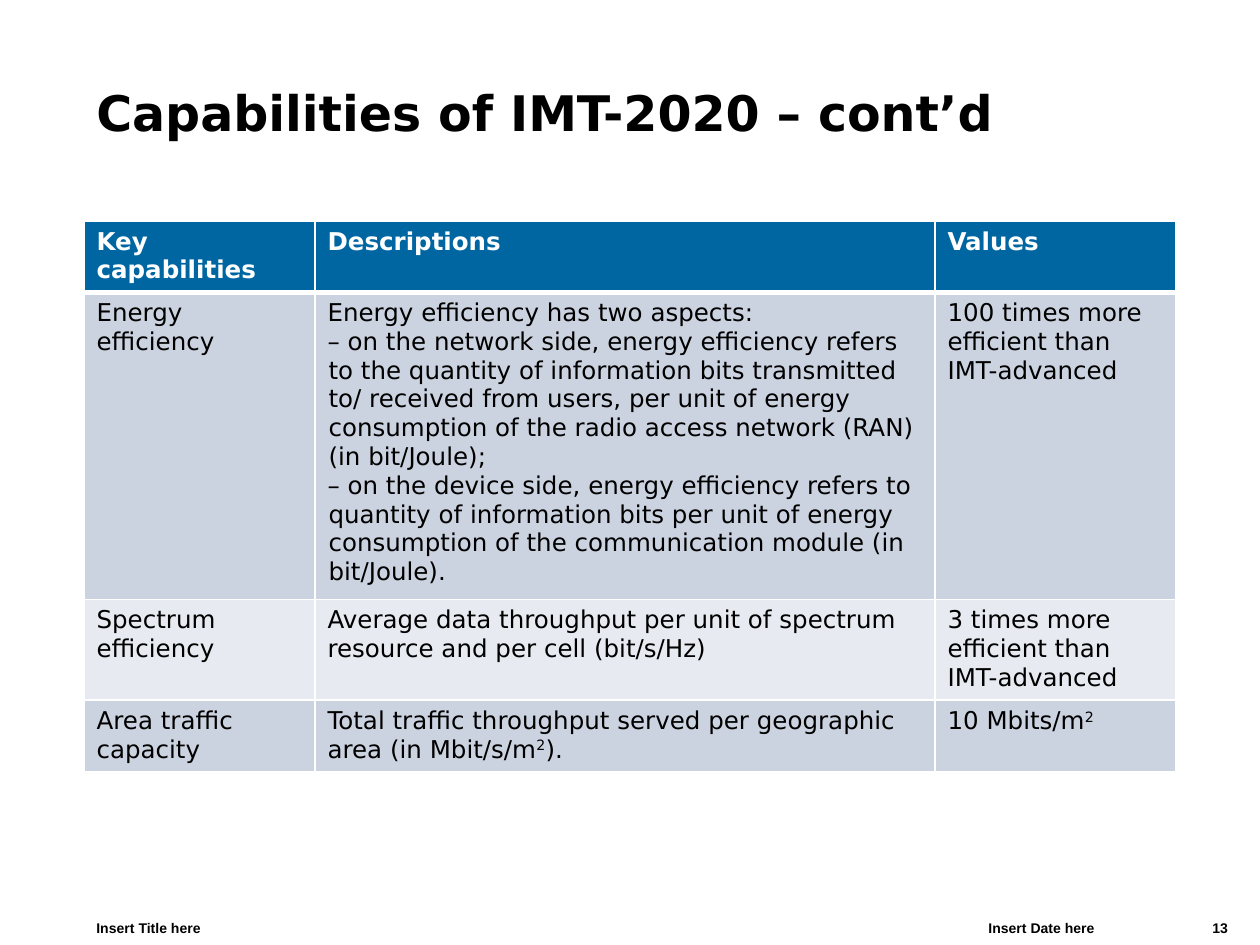
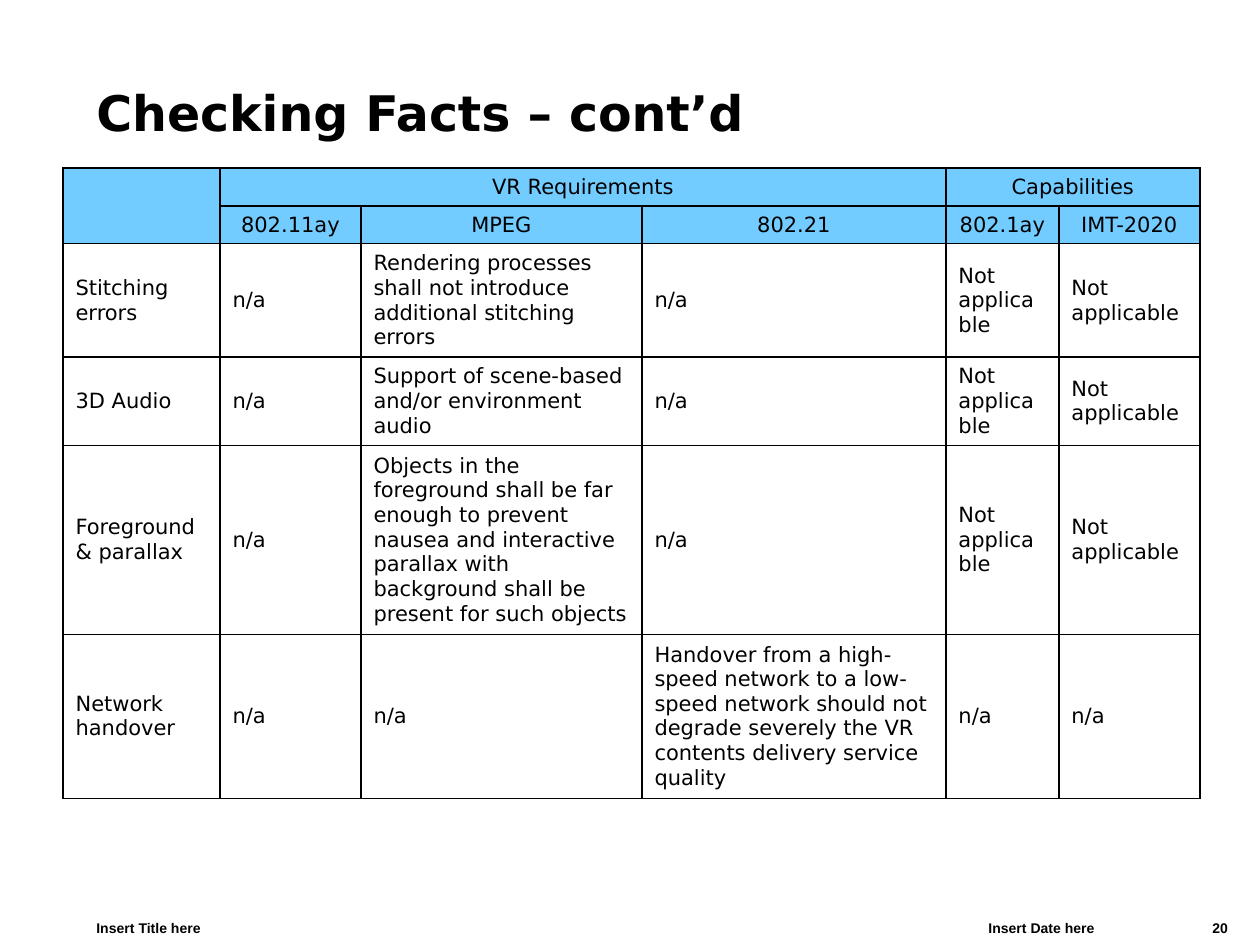
from lxml.etree import SubElement
from pptx import Presentation
from pptx.dml.color import RGBColor
from pptx.enum.text import MSO_ANCHOR, PP_ALIGN
from pptx.oxml.ns import qn
from pptx.util import Inches, Pt

PX = 7257  # EMU in one pixel, 126 pixels to the inch

BLACK = RGBColor(0x00, 0x00, 0x00)
WHITE = RGBColor(0xFF, 0xFF, 0xFF)
DEEP_BLUE = RGBColor(0x00, 0x66, 0xA1)
SKY_BLUE = RGBColor(0x73, 0xCC, 0xFF)
GREY_BLUE = RGBColor(0xCC, 0xD3, 0xE0)
PALE_GREY = RGBColor(0xE7, 0xEA, 0xF0)

BODY_FONT = "DejaVu Sans"
FOOTER_FONT = "Arial"

CAPABILITIES = [
    ["Key capabilities", "Descriptions", "Values"],
    ["Energy efficiency",
     "Energy efficiency has two aspects:\n"
     "– on the network side, energy efficiency refers to the quantity of "
     "information bits transmitted to/ received from users, per unit of energy "
     "consumption of the radio access network (RAN) (in bit/Joule);\n"
     "– on the device side, energy efficiency refers to quantity of information "
     "bits per unit of energy consumption of the communication module (in bit/Joule).",
     "100 times more efficient than IMT-advanced"],
    ["Spectrum efficiency",
     "Average data throughput per unit of spectrum resource and per cell (bit/s/Hz)",
     "3 times more efficient than IMT-advanced"],
    ["Area traffic capacity",
     "Total traffic throughput served per geographic area (in Mbit/s/m²).",
     "10 Mbits/m²"],
]

NOT_APPLICABLE = ["Not applicable"] * 2
FACTS = [
    ["", "VR Requirements", "", "", "Capabilities", ""],
    ["", "802.11ay", "MPEG", "802.21", "802.1ay", "IMT-2020"],
    ["Stitching errors", "n/a",
     "Rendering processes shall not introduce additional stitching errors",
     "n/a", *NOT_APPLICABLE],
    ["3D Audio", "n/a", "Support of scene-based and/or environment audio",
     "n/a", *NOT_APPLICABLE],
    ["Foreground & parallax", "n/a",
     "Objects in the foreground shall be far enough to prevent nausea and "
     "interactive parallax with background shall be present for such objects",
     "n/a", *NOT_APPLICABLE],
    ["Network handover", "n/a", "n/a",
     "Handover from a high-speed network to a low-speed network should not "
     "degrade severely the VR contents delivery service quality",
     "n/a", "n/a"],
]

PAGES = [
    dict(title="Capabilities of IMT-2020 – cont’d", number="13", cells=CAPABILITIES,
         left=84, top=221, columns=[231, 620, 241], rows=[69, 301, 99, 69],
         merges=[], header_rows=1, header_fill=DEEP_BLUE, header_color=WHITE,
         header_bold=True, header_align=PP_ALIGN.LEFT, header_line=3,
         bands=[GREY_BLUE, PALE_GREY], grid=WHITE, size=14, anchor=MSO_ANCHOR.TOP),
    dict(title="Checking Facts – cont’d", number="20", cells=FACTS,
         left=63, top=168, columns=[157, 141, 281, 304, 113, 141],
         rows=[37, 37, 111, 87, 185, 160],
         merges=[(0, 0, 1, 0), (0, 1, 0, 3), (0, 4, 0, 5)],
         header_rows=2, header_fill=SKY_BLUE, header_color=BLACK,
         header_bold=False, header_align=PP_ALIGN.CENTER, header_line=1,
         bands=[None], grid=BLACK, size=12, anchor=MSO_ANCHOR.MIDDLE),
]


def write(frame, text, size, color=BLACK, bold=False, font=BODY_FONT, align=PP_ALIGN.LEFT):
    """Fill a text frame, one paragraph a line, raising each ² as a superscript 2."""
    frame.word_wrap = True
    lines = text.split("\n")
    for index, line in enumerate(lines):
        paragraph = frame.add_paragraph() if index else frame.paragraphs[0]
        paragraph.alignment = align
        if len(lines) > 1:
            properties = paragraph._p.get_or_add_pPr()
            properties.set("marL", str(PX))
            properties.set("indent", str(-PX))
        paragraph.font.name = font
        paragraph.font.size = Pt(size)
        paragraph.font.bold = bold
        paragraph.font.color.rgb = color
        before, square, after = line.partition("²")
        for part in (before, square, after):
            if part:
                span = paragraph.add_run()
                span.text = part.replace("²", "2")
                if part == "²":
                    span._r.get_or_add_rPr().set("baseline", "30000")


def draw_borders(cell, color, top, bottom):
    """Rule all four sides; top and bottom are widths in points."""
    properties = cell._tc.get_or_add_tcPr()
    for side, width in (("L", 1), ("R", 1), ("T", top), ("B", bottom)):
        line = SubElement(properties, qn(f"a:ln{side}"), w=str(Pt(width)))
        fill = SubElement(line, qn("a:solidFill"))
        SubElement(fill, qn("a:srgbClr"), val=str(color))


deck = Presentation()
deck.slide_width, deck.slide_height = Inches(10), Inches(7.5)

for plan in PAGES:
    page = deck.slides.add_slide(deck.slide_layouts[6])

    title = page.shapes.add_textbox(84 * PX, 42 * PX, 1113 * PX, 105 * PX)
    title.text_frame.vertical_anchor = MSO_ANCHOR.BOTTOM
    write(title.text_frame, plan["title"], 28, bold=True)

    for left, width, label in ((976, 147, "Insert Date here"),
                               (84, 662, "Insert Title here"),
                               (1200, 60, plan["number"])):
        footer = page.shapes.add_textbox(left * PX, 913 * PX, width * PX, 32 * PX)
        write(footer.text_frame, label, 8, bold=True, font=FOOTER_FONT)

    columns, rows = plan["columns"], plan["rows"]
    table = page.shapes.add_table(
        len(rows), len(columns), plan["left"] * PX, plan["top"] * PX,
        sum(columns) * PX, sum(rows) * PX).table
    table.first_row = plan["header_bold"]
    table.horz_banding = False
    for column, width in zip(table.columns, columns):
        column.width = width * PX
    for row, height in zip(table.rows, rows):
        row.height = height * PX
    for top, left, bottom, right in plan["merges"]:
        table.cell(top, left).merge(table.cell(bottom, right))

    header_rows = plan["header_rows"]
    for row, texts in enumerate(plan["cells"]):
        is_header = row < header_rows
        body_fill = plan["bands"][(row - header_rows) % len(plan["bands"])]
        fill_color = plan["header_fill"] if is_header else body_fill
        for column, text in enumerate(texts):
            cell = table.cell(row, column)
            cell.vertical_anchor = plan["anchor"]
            draw_borders(cell, plan["grid"],
                         top=plan["header_line"] if row == header_rows else 1,
                         bottom=plan["header_line"] if row == header_rows - 1 else 1)
            if fill_color is None:
                cell.fill.background()
            else:
                cell.fill.solid()
                cell.fill.fore_color.rgb = fill_color
            if is_header:
                write(cell.text_frame, text, plan["size"], plan["header_color"],
                      plan["header_bold"], align=plan["header_align"])
            else:
                write(cell.text_frame, text, plan["size"])

deck.save("out.pptx")
